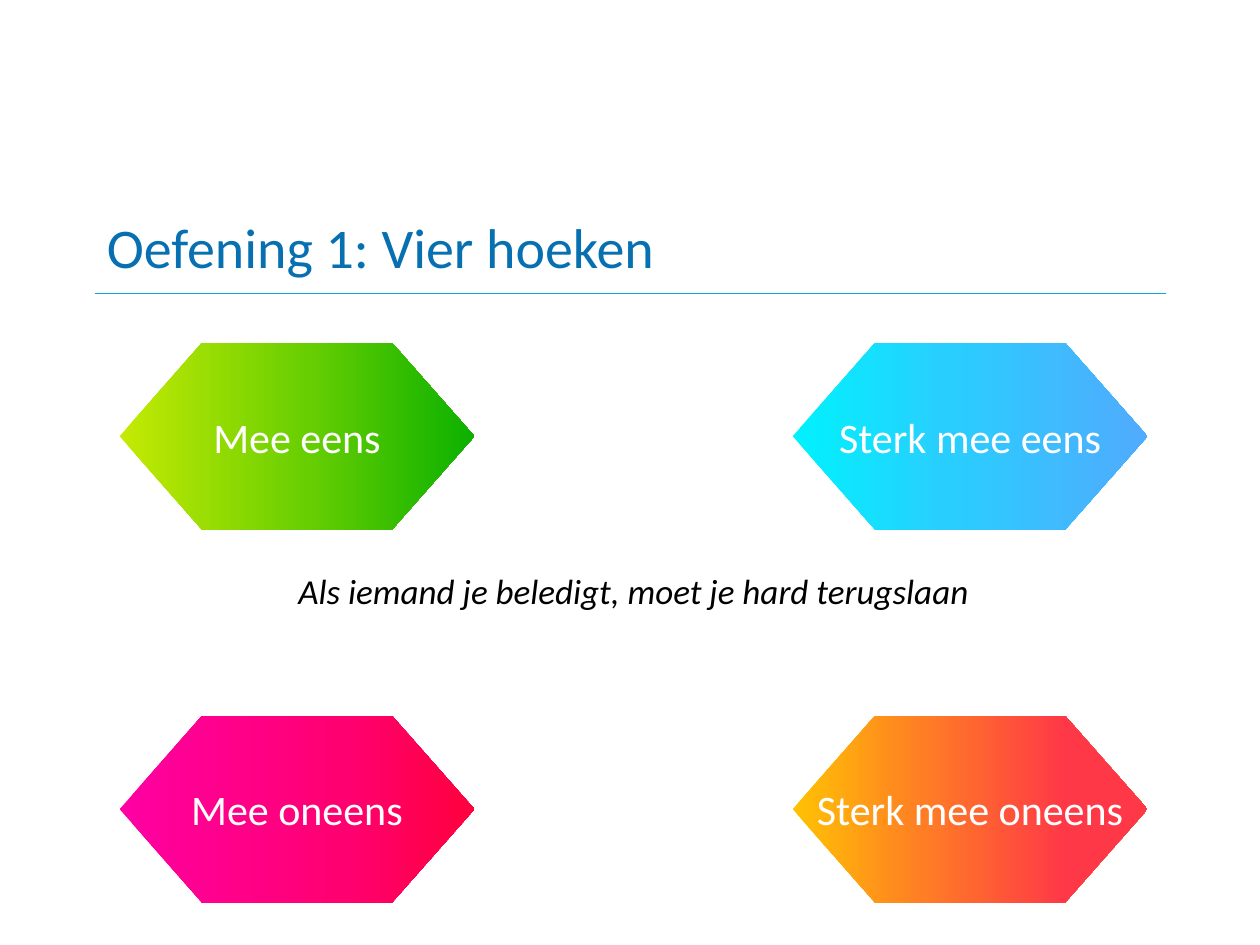
"""Builds the 'Vier hoeken' exercise slide with four answer corners around a statement."""
from copy import deepcopy
from itertools import product

from pptx import Presentation
from pptx.dml.color import RGBColor
from pptx.enum.shapes import MSO_CONNECTOR
from pptx.enum.text import MSO_ANCHOR, PP_ALIGN
from pptx.oxml.ns import qn
from pptx.oxml.xmlchemy import OxmlElement
from pptx.util import Inches, Pt

THEME = {
    "font": "Calibri",
    "title": ("0770B1", 32),
    "answer": ("FFFFFF", 24),
    "statement": ("000000", 20),
    "rule": "0BA7DF",
    "gradients": [
        [(1, "C3EA03"), (53, "67CE02"), (100, "0CB100")],
        [(0, "00F2FE"), (42, "28CFFE"), (98, "4FACFE")],
        [(1, "FF00A2"), (63, "FF0071"), (98, "FF0040")],
        [(0, "FFC203"), (37, "FF7D25"), (77, "FF3847")],
    ],
}
ANSWERS = ["Mee eens", "Sterk mee eens", "Mee oneens", "Sterk mee oneens"]

deck = Presentation()
deck.slide_width, deck.slide_height = Inches(10), Inches(7.5)
slide = deck.slides.add_slide(deck.slide_layouts[6])


def place(column, row):
    """Turn percentages of the slide's width and height into lengths."""
    return round(deck.slide_width * column / 100), round(deck.slide_height * row / 100)


def write(holder, text, role, align, anchor=MSO_ANCHOR.MIDDLE):
    """Set one styled paragraph and return it."""
    frame = holder.text_frame
    frame.text = text
    frame.word_wrap = True
    frame.vertical_anchor = anchor
    paragraph = frame.paragraphs[0]
    paragraph.alignment = align
    color, size = THEME[role]
    font = paragraph.runs[0].font
    font.name, font.size = THEME["font"], Pt(size)
    font.color.rgb = RGBColor.from_string(color)
    return paragraph


rule = slide.shapes.add_connector(MSO_CONNECTOR.STRAIGHT, *place(7.5, 31.07), *place(92.5, 31.07))
rule.line.color.rgb = RGBColor.from_string(THEME["rule"])
rule.line.width = Pt(0.75)
rule._element.spPr.append(OxmlElement("a:effectLst"))

title = slide.shapes.add_textbox(*place(7.5, 21.07), *place(85, 10))
write(title, "Oefening 1: Vier hoeken", "title", PP_ALIGN.LEFT)

width, height, tip = 28.15, 19.8, 6.55
corners = product((36.27, 75.73), (9.5, 62.92))
for (top, left), answer, gradient in zip(corners, ANSWERS, THEME["gradients"]):
    right, bottom, middle = left + width, top + height, top + height / 2
    outline = slide.shapes.build_freeform(*place(left, middle))
    outline.add_line_segments([
        place(left + tip, top), place(right - tip, top), place(right, middle),
        place(right - tip, bottom), place(left + tip, bottom),
    ])
    hexagon = outline.convert_to_shape()
    hexagon.shadow.inherit = False
    hexagon.line.fill.background()

    hexagon.fill.gradient()
    hexagon.fill.gradient_angle = 0
    stop_list = hexagon._element.spPr.find(qn("a:gradFill")).find(qn("a:gsLst"))
    stop_list.append(deepcopy(stop_list[0]))
    for stop, (position, color) in zip(hexagon.fill.gradient_stops, gradient):
        stop.position = position / 100
        stop.color.rgb = RGBColor.from_string(color)

    frame = hexagon.text_frame
    frame.margin_left = frame.margin_right = frame.margin_top = frame.margin_bottom = Inches(0.05)
    write(hexagon, answer, "answer", PP_ALIGN.CENTER)

statement = slide.shapes.add_textbox(*place(22.3, 59.6), *place(56, 5.87))
sentence = write(statement, "Als iemand je beledigt, moet je hard terugslaan", "statement",
                 PP_ALIGN.CENTER, MSO_ANCHOR.TOP)
sentence.runs[0].font.italic = True

deck.save("out.pptx")
